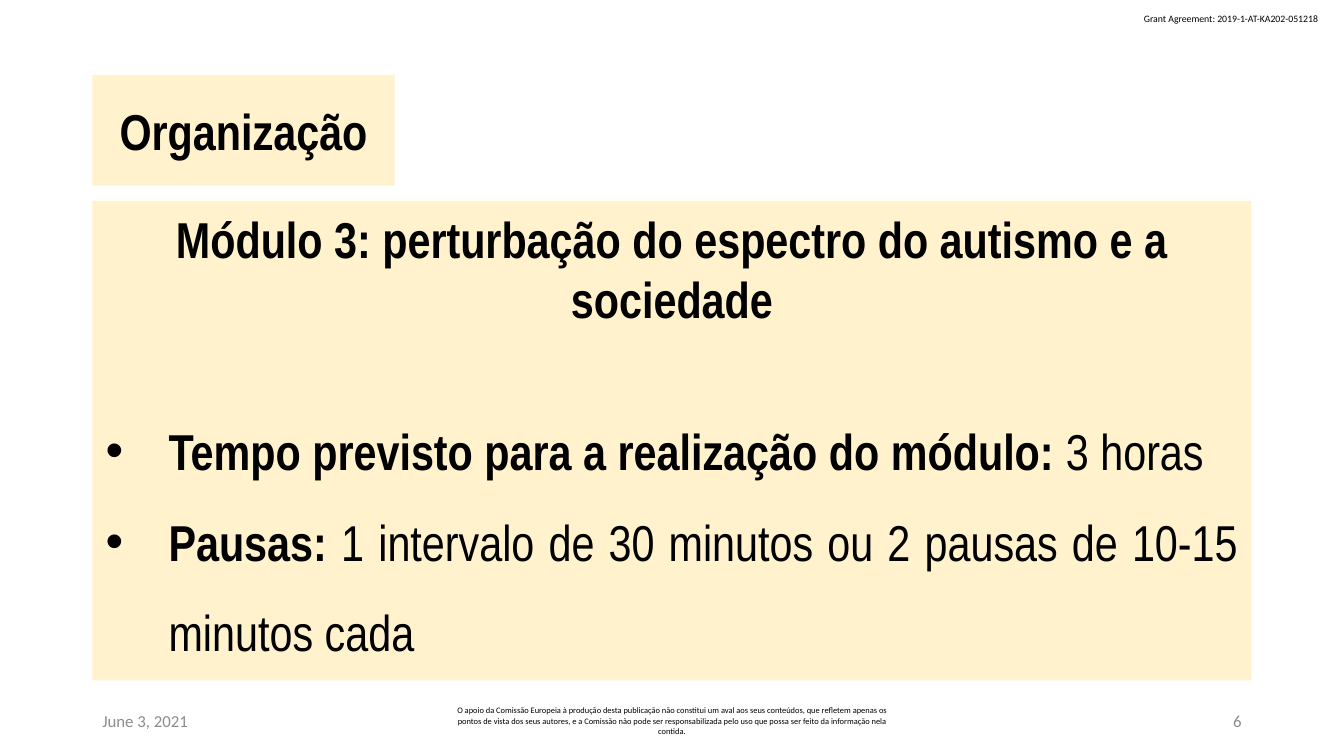
from lxml.etree import SubElement
from pptx import Presentation
from pptx.dml.color import RGBColor
from pptx.enum.shapes import MSO_SHAPE
from pptx.enum.text import MSO_ANCHOR as Anchor, MSO_AUTO_SIZE as AutoSize, PP_ALIGN as Align
from pptx.oxml.ns import qn
from pptx.util import Pt

BLACK, GREY, CREAM = "000000", "8C8C8C", "FFF2CC"
NARROW, SANS = "Arial Narrow", "Calibri"
LEFT, WIDTH = 66, 828
FOOTER_TOP, FOOTER_HEIGHT = 500.4, 28.8
INDENT = 45


def paint(color_format, color):
    """Set a colour from a hex string."""
    color_format.rgb = RGBColor.from_string(color)


def add_run(paragraph, text, size, font=NARROW, color=BLACK, bold=False):
    """Append one formatted run to a paragraph."""
    run = paragraph.add_run()
    run.text = text
    run.font.name, run.font.size, run.font.bold = font, Pt(size), bold
    paint(run.font.color, color)


def place(shape, left, top, width, height):
    """Move and size a shape."""
    shape.left, shape.top, shape.width, shape.height = map(Pt, (left, top, width, height))


def style_panel(panel, anchor):
    """Give a panel its cream fill, insets and anchor."""
    panel.fill.solid()
    paint(panel.fill.fore_color, CREAM)
    panel.line.fill.background()
    frame = panel.text_frame
    frame.word_wrap, frame.auto_size, frame.vertical_anchor = True, AutoSize.NONE, anchor
    frame.margin_left = frame.margin_right = Pt(9.4)
    frame.margin_top = frame.margin_bottom = Pt(5)


def add_label(slide, box, text, size, color, align=Align.LEFT, wrap=True):
    """Add a small text label for the slide margins."""
    label = slide.shapes.add_textbox(*map(Pt, box))
    frame = label.text_frame
    frame.word_wrap = wrap
    frame.vertical_anchor = Anchor.MIDDLE if wrap else Anchor.TOP
    frame.paragraphs[0].alignment = align
    add_run(frame.paragraphs[0], text, size, SANS, color)


def add_bullet(frame, term, detail, space_before=0):
    """Add a justified bullet with a bold term and a plain detail."""
    paragraph = frame.add_paragraph()
    properties = paragraph._p.get_or_add_pPr()
    properties.set("marL", str(Pt(INDENT)))
    properties.set("indent", str(-Pt(INDENT)))
    SubElement(properties, qn("a:buFont")).set("typeface", "Arial")
    SubElement(properties, qn("a:buChar")).set("char", "•")
    paragraph.alignment, paragraph.line_spacing = Align.JUSTIFY, 1.5
    paragraph.space_before = Pt(space_before)
    add_run(paragraph, term, 36, bold=True)
    add_run(paragraph, detail, 36)


def add_title(slide, text):
    """Fill the title placeholder as a cream panel."""
    title = slide.shapes.title
    place(title, LEFT, 53.5, 216, 79.2)
    style_panel(title, Anchor.MIDDLE)
    heading = title.text_frame.paragraphs[0]
    heading.alignment = Align.CENTER
    add_run(heading, text, 36, bold=True)


def add_module_panel(slide, module, bullets):
    """Add the main panel with the module name and its bullets."""
    panel = slide.shapes.add_shape(MSO_SHAPE.RECTANGLE, Pt(LEFT), Pt(143.5), Pt(WIDTH), Pt(342.5))
    panel.shadow.inherit = False
    style_panel(panel, Anchor.TOP)
    frame = panel.text_frame
    heading = frame.paragraphs[0]
    heading.alignment = Align.CENTER
    add_run(heading, module, 36, bold=True)
    for index, (term, detail) in enumerate(bullets):
        add_bullet(frame, term, detail, 0 if index else 43.5)


def main():
    """Build and save the slide."""
    deck = Presentation()
    deck.slide_width, deck.slide_height = Pt(960), Pt(540)
    slide = deck.slides.add_slide(deck.slide_layouts[5])
    add_label(slide, (810, 5.8, 142, 15.8), "Grant Agreement: 2019-1-AT-KA202-051218",
              7, BLACK, wrap=False)
    disclaimer = (
        "O apoio da Comissão Europeia à produção desta publicação não constitui um aval "
        "aos seus conteúdos, que refletem apenas os pontos de vista dos seus autores, e a "
        "Comissão não pode ser responsabilizada pelo uso que possa ser feito da informação "
        "nela contida.")
    footers = [
        (LEFT, 216, "June 3, 2021", 12, GREY, Align.LEFT),
        (318, 324, disclaimer, 6, BLACK, Align.CENTER),
        (678, 216, "6", 12, GREY, Align.RIGHT),
    ]
    for left, width, text, size, color, align in footers:
        add_label(slide, (left, FOOTER_TOP, width, FOOTER_HEIGHT), text, size, color, align)
    add_title(slide, "Organização")
    add_module_panel(slide, "Módulo 3: perturbação do espectro do autismo e a sociedade", [
        ("Tempo previsto para a realização do módulo: ", "3 horas"),
        ("Pausas: ", "1 intervalo de 30 minutos ou 2 pausas de 10-15 minutos cada"),
    ])
    deck.save("out.pptx")


if __name__ == "__main__":
    main()
